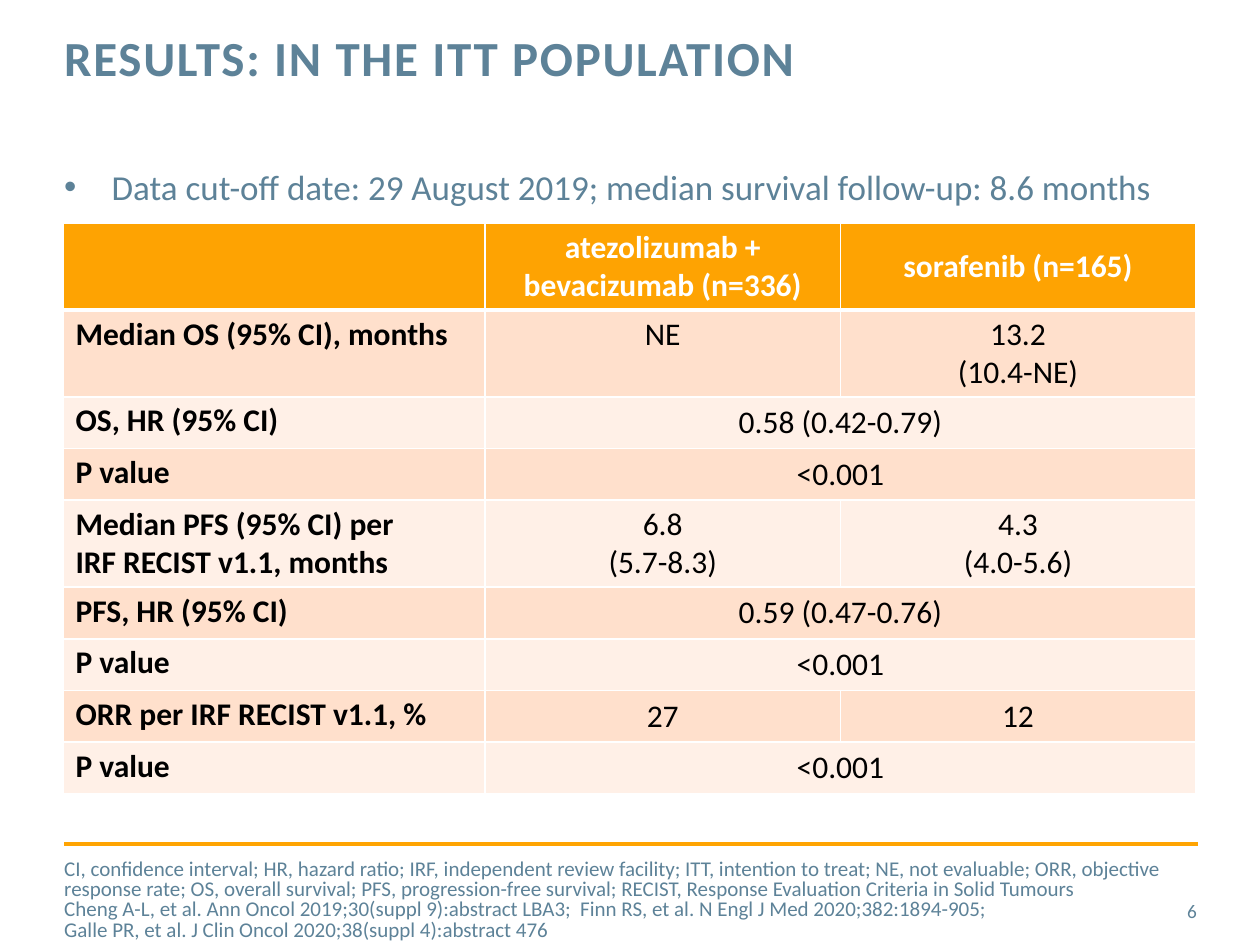
from lxml import etree
from pptx import Presentation
from pptx import util as u
from pptx.dml.color import RGBColor
from pptx.enum import shapes, text
from pptx.oxml import parse_xml
from pptx.oxml.ns import nsdecls, qn

COLORS = {"accent": "FEA302", "rule": "FFA402", "ink": "5D8298", "black": "000000",
          "white": "FFFFFF", "dark_band": "FFE0CC", "light_band": "FFF0E7"}
FONT = "Calibri"
LEFT, RIGHT = 0.51, 9.51
COLUMN_WIDTHS = (3.35, 2.82, 2.82)
ROW_HEIGHT, TALL_ROW_HEIGHT = 0.41, 0.68
RESULTS = (
    ("", "atezolizumab + bevacizumab (n=336)", "sorafenib (n=165)"),
    ("Median OS (95% CI), months", "NE", "13.2\n(10.4-NE)"),
    ("OS, HR (95% CI)", "0.58 (0.42-0.79)"),
    ("P value", "<0.001"),
    ("Median PFS (95% CI) per\vIRF RECIST v1.1, months", "6.8\n(5.7-8.3)", "4.3\n(4.0-5.6)"),
    ("PFS, HR (95% CI)", "0.59 (0.47-0.76)"),
    ("P value", "<0.001"),
    ("ORR per IRF RECIST v1.1, %", "27", "12"),
    ("P value", "<0.001"),
)
TALL_ROWS = (0, 1, 4)
FOOTNOTES = (
    "CI, confidence interval; HR, hazard ratio; IRF, independent review facility; "
    "ITT, intention to treat; NE, not evaluable; ORR, objective response rate; "
    "OS, overall survival; PFS, progression-free survival; "
    "RECIST, Response Evaluation Criteria in Solid Tumours\n"
    "Cheng A-L, et al. Ann Oncol 2019;30(suppl 9):abstract LBA3;  "
    "Finn RS, et al. N Engl J Med 2020;382:1894-905;\v"
    "Galle PR, et al. J Clin Oncol 2020;38(suppl 4):abstract 476"
)


def color(name):
    """Return the named colour."""
    return RGBColor.from_string(COLORS[name])


def place(shape, left, top, width, height):
    """Set the position and size of a shape in inches."""
    shape.left, shape.top = u.Inches(left), u.Inches(top)
    shape.width, shape.height = u.Inches(width), u.Inches(height)


def write(frame, content, size, ink="ink", bold=False, align=text.PP_ALIGN.LEFT, spacing=None):
    """Fill a text frame with evenly formatted paragraphs."""
    frame.text = content
    for paragraph in frame.paragraphs:
        paragraph.alignment = align
        paragraph.space_before = u.Pt(0)
        if spacing:
            paragraph.line_spacing = spacing
        font = paragraph.font
        font.name, font.size, font.bold = FONT, u.Pt(size), bold
        font.color.rgb = color(ink)


def prepare_frame(shape, anchor):
    """Remove the margins and fix wrapping and anchoring of a shape's text."""
    frame = shape.text_frame
    frame.margin_left = frame.margin_right = frame.margin_top = frame.margin_bottom = 0
    frame.word_wrap = True
    frame.auto_size = text.MSO_AUTO_SIZE.NONE
    frame.vertical_anchor = anchor
    return frame


def add_title(slide, content):
    """Fill the title placeholder with letter-spaced bold text."""
    title = slide.shapes.title
    place(title, LEFT, 0.27, 7.17, 0.88)
    frame = prepare_frame(title, text.MSO_ANCHOR.TOP)
    write(frame, content, 28, bold=True, spacing=u.Pt(30))
    frame.paragraphs[0].runs[0].font._element.set("spc", "100")


def add_bullet(slide, content):
    """Fill the body placeholder with one bulleted paragraph."""
    body = slide.placeholders[1]
    place(body, LEFT, 1.31, RIGHT - LEFT, 4.95)
    frame = prepare_frame(body, text.MSO_ANCHOR.TOP)
    properties = frame.paragraphs[0]._p.get_or_add_pPr()
    properties.set("marL", str(u.Inches(0.31)))
    properties.set("indent", str(-u.Inches(0.31)))
    bullet_color = etree.SubElement(properties, qn("a:buClr"))
    etree.SubElement(bullet_color, qn("a:srgbClr"), val=COLORS["accent"])
    etree.SubElement(properties, qn("a:buChar"), char="•")
    write(frame, content, 20)


def add_label(slide, box, content, size, **style):
    """Add a vertically centred text box without margins."""
    label = slide.shapes.add_textbox(*map(u.Inches, box))
    write(prepare_frame(label, text.MSO_ANCHOR.MIDDLE), content, size, **style)


def add_rule(slide, top):
    """Draw the horizontal line above the footnotes."""
    rule = slide.shapes.add_connector(
        shapes.MSO_CONNECTOR.STRAIGHT, *map(u.Inches, (LEFT, top, RIGHT, top)))
    rule.line.color.rgb = color("rule")
    rule.line.width = u.Pt(2)
    etree.SubElement(rule._element.spPr, qn("a:effectLst"))


def set_borders(cell, top=1, bottom=1):
    """Give a cell white borders with widths in points."""
    properties = cell._tc.get_or_add_tcPr()
    widths = {"lnL": 1, "lnR": 1, "lnT": top, "lnB": bottom}
    for index, (side, width) in enumerate(widths.items()):
        properties.insert(index, parse_xml(
            f'<a:{side} {nsdecls("a")} w="{u.Pt(width)}"><a:solidFill>'
            f'<a:srgbClr val="{COLORS["white"]}"/></a:solidFill></a:{side}>'))


def style_cell(cell, row, column):
    """Fill, border and anchor a cell by its place in the table."""
    band = "accent" if row == 0 else ("light_band", "dark_band")[row % 2]
    cell.fill.solid()
    cell.fill.fore_color.rgb = color(band)
    set_borders(cell, top=3 if row == 1 else 1, bottom=3 if row == 0 else 1)
    cell.margin_left = cell.margin_right = u.Inches(0.1)
    cell.margin_top = cell.margin_bottom = u.Inches(0.04)
    at_top = row == 1 or (row > 0 and column == 0)
    cell.vertical_anchor = text.MSO_ANCHOR.TOP if at_top else text.MSO_ANCHOR.MIDDLE


def add_results_table(slide):
    """Add the results, merging the arms where one value covers both."""
    heights = [TALL_ROW_HEIGHT if row in TALL_ROWS else ROW_HEIGHT for row in range(len(RESULTS))]
    box = (0.5, 1.77, sum(COLUMN_WIDTHS), sum(heights))
    table = slide.shapes.add_table(len(RESULTS), len(COLUMN_WIDTHS), *map(u.Inches, box)).table
    for column, width in zip(table.columns, COLUMN_WIDTHS):
        column.width = u.Inches(width)
    for row, values in enumerate(RESULTS):
        table.rows[row].height = u.Inches(heights[row])
        for column in range(len(COLUMN_WIDTHS)):
            style_cell(table.cell(row, column), row, column)
        if len(values) == 2:
            table.cell(row, 1).merge(table.cell(row, 2))
        for column, value in enumerate(values):
            write(table.cell(row, column).text_frame, value, 18,
                  ink="black" if row else "white", bold=row == 0 or column == 0,
                  align=text.PP_ALIGN.CENTER if column else text.PP_ALIGN.LEFT)


def main():
    """Build and save the slide."""
    presentation = Presentation()
    presentation.slide_width, presentation.slide_height = u.Inches(10), u.Inches(7.5)
    slide = presentation.slides.add_slide(presentation.slide_layouts[1])
    add_rule(slide, 6.7)
    add_bullet(slide, "Data cut-off date: 29 August 2019; median survival follow-up: 8.6 months")
    add_title(slide, "RESULTS: IN THE ITT POPULATION")
    add_label(slide, (8.86, 7.03, 0.64, 0.4), "6", 11, align=text.PP_ALIGN.RIGHT)
    add_label(slide, (LEFT, 6.95, 8.82, 0.4), FOOTNOTES, 12, spacing=0.8)
    add_results_table(slide)
    presentation.save("out.pptx")


if __name__ == "__main__":
    main()
